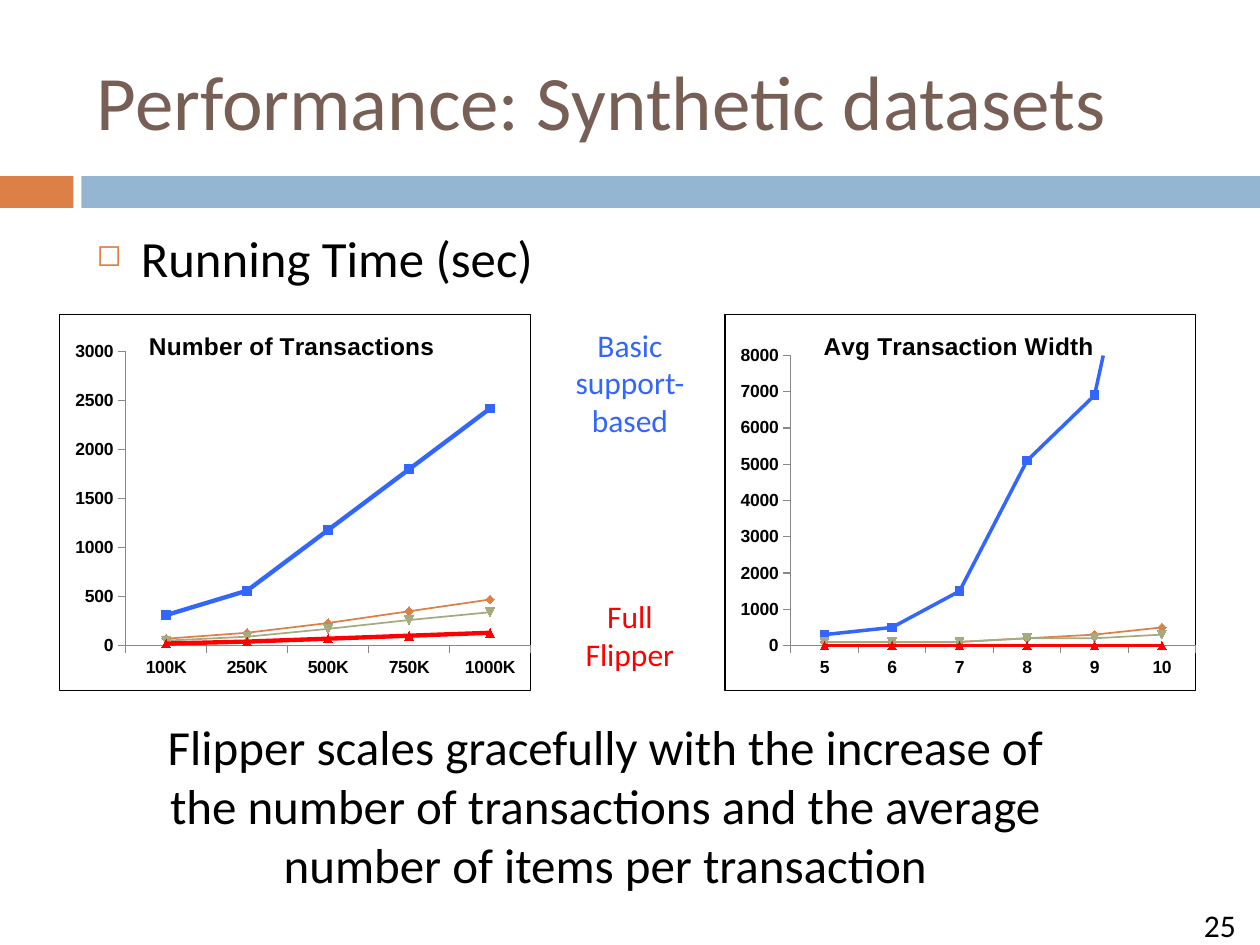
from lxml import etree
from pptx import Presentation
from pptx.chart.data import CategoryChartData
from pptx.dml.color import RGBColor
from pptx.enum.chart import XL_CHART_TYPE, XL_TICK_MARK
from pptx.enum.shapes import MSO_SHAPE
from pptx.enum.text import MSO_ANCHOR, PP_ALIGN
from pptx.oxml import parse_xml
from pptx.oxml.ns import nsdecls, qn
from pptx.util import Cm, Pt

LINE_MARKERS = XL_CHART_TYPE.LINE_MARKERS
TICK_OUTSIDE, TICK_NONE = XL_TICK_MARK.OUTSIDE, XL_TICK_MARK.NONE
RECTANGLE = MSO_SHAPE.RECTANGLE
LEFT, CENTER = PP_ALIGN.LEFT, PP_ALIGN.CENTER
MIDDLE = MSO_ANCHOR.MIDDLE

BLACK = RGBColor(0x00, 0x00, 0x00)
GRAY = RGBColor(0x88, 0x88, 0x88)
BROWN = RGBColor(0x77, 0x5F, 0x55)
ORANGE = RGBColor(0xDD, 0x80, 0x47)
PALE_BLUE = RGBColor(0x94, 0xB6, 0xD2)
BLUE = RGBColor(0x33, 0x66, 0xFF)
GREEN = RGBColor(0xA5, 0xAB, 0x81)
RED = RGBColor(0xFF, 0x00, 0x00)

SERIES_COLORS = (BLUE, ORANGE, GREEN, RED)


class SlideBuilder:
    """Holds the style and the current slide, and adds each kind of element."""

    text_font = "Calibri"
    chart_font = "Arial"

    def __init__(self, slide):
        self.slide = slide

    def format_text(self, text_frame, text, size, color, alignment):
        text_frame.word_wrap = True
        text_frame.text = text
        paragraph = text_frame.paragraphs[0]
        paragraph.alignment = alignment
        font = paragraph.runs[0].font
        font.name, font.size = self.text_font, Pt(size)
        font.color.rgb = color
        return paragraph

    def title(self, text, left, top, width, height):
        shape = self.slide.shapes.title
        shape.left, shape.top = Cm(left), Cm(top)
        shape.width, shape.height = Cm(width), Cm(height)
        shape.text_frame.vertical_anchor = MIDDLE
        self.format_text(shape.text_frame, text, 44, BROWN, LEFT)

    def band(self, left, width, color):
        shape = self.slide.shapes.add_shape(RECTANGLE, Cm(left), Cm(3.55), Cm(width), Cm(0.64))
        shape.shadow.inherit = False
        shape.fill.solid()
        shape.fill.fore_color.rgb = color
        shape.line.fill.background()

    def text(self, text, left, top, width, height, size, color=BLACK, alignment=CENTER):
        shape = self.slide.shapes.add_textbox(Cm(left), Cm(top), Cm(width), Cm(height))
        return self.format_text(shape.text_frame, text, size, color, alignment)

    def bullet(self, text, left, top, width, height):
        paragraph = self.text(text, left, top, width, height, 29, alignment=LEFT)
        properties = paragraph._p.get_or_add_pPr()
        properties.set("marL", str(Cm(0.89)))
        properties.set("indent", str(Cm(-0.89)))
        color = etree.SubElement(properties, qn("a:buClr"))
        etree.SubElement(color, qn("a:srgbClr"), val=str(ORANGE))
        etree.SubElement(properties, qn("a:buSzPct"), val="60000")
        etree.SubElement(properties, qn("a:buChar"), char="◻")

    def place(self, element, **position):
        layout = element.find(qn("c:layout"))
        if layout is None:
            layout = etree.Element(qn("c:layout"))
            element.insert(0, layout)
        manual = etree.SubElement(layout, qn("c:manualLayout"))
        if "w" in position:
            etree.SubElement(manual, qn("c:layoutTarget"), val="inner")
        for side in ("x", "y"):
            etree.SubElement(manual, qn(f"c:{side}Mode"), val="edge")
        for key, value in position.items():
            etree.SubElement(manual, qn(f"c:{key}"), val=str(value))

    def axis(self, axis):
        axis.has_major_gridlines = False
        axis.major_tick_mark, axis.minor_tick_mark = TICK_OUTSIDE, TICK_NONE
        axis.format.line.color.rgb = GRAY
        axis.format.line.width = Pt(0.75)
        font = axis.tick_labels.font
        font.name, font.size, font.bold = self.chart_font, Pt(10), True
        font.color.rgb = BLACK

    def chart_title(self, chart, text, x, y):
        chart.has_title = True
        text_frame = chart.chart_title.text_frame
        text_frame.text = text
        font = text_frame.paragraphs[0].runs[0].font
        font.name, font.size, font.bold = self.chart_font, Pt(14), True
        font.color.rgb = BLACK
        element = chart.chart_title._element
        self.place(element, x=x, y=y)
        element.find(qn("c:overlay")).set("val", "1")

    def chart(self, title, title_at, left, categories, rows, maximum, unit, widths, plot):
        data = CategoryChartData()
        data.categories = categories
        for number, values in enumerate(rows, 1):
            data.add_series(f"Series {number}", values)
        chart = self.slide.shapes.add_chart(
            LINE_MARKERS, Cm(left), Cm(6.32), Cm(9.52), Cm(7.62), data).chart
        chart.has_legend = False
        chart.font.name, chart.font.size = self.text_font, Pt(10)
        self.chart_title(chart, title, *title_at)
        self.axis(chart.category_axis)
        self.axis(chart.value_axis)
        chart.value_axis.minimum_scale, chart.value_axis.maximum_scale = 0, maximum
        chart.value_axis.major_unit = unit
        chart.plots[0].vary_by_categories = False
        for series, color, width in zip(chart.plots[0].series, SERIES_COLORS, widths):
            series.smooth = False
            series.format.line.color.rgb = color
            series.format.line.width = Pt(width)
            series.marker.size = 5
            series.marker.format.fill.solid()
            series.marker.format.fill.fore_color.rgb = color
            series.marker.format.line.color.rgb = color
        chart_element = chart._chartSpace.find(qn("c:chart"))
        self.place(chart_element.find(qn("c:plotArea")), **plot)
        chart_element.addnext(parse_xml(
            f'<c:spPr {nsdecls("c", "a")}><a:noFill/><a:ln w="{Pt(0.75)}"><a:solidFill>'
            f'<a:srgbClr val="{BLACK}"/></a:solidFill></a:ln></c:spPr>'))


def main():
    presentation = Presentation()
    presentation.slide_width, presentation.slide_height = Cm(25.4), Cm(19.05)
    builder = SlideBuilder(presentation.slides.add_slide(presentation.slide_layouts[5]))

    builder.band(0, 1.48, ORANGE)
    builder.band(1.64, 23.76, PALE_BLUE)
    builder.title("Performance: Synthetic datasets", 1.7, 0.64, 22.66, 2.74)
    builder.bullet("Running Time (sec)", 1.7, 4.45, 22.66, 1.5)
    builder.chart(
        "Number of Transactions", (0.18, 0.03), 1.19,
        ("100K", "250K", "500K", "750K", "1000K"),
        ((310, 560, 1180, 1800, 2420), (70, 130, 230, 350, 470),
         (50, 90, 170, 260, 340), (20, 40, 70, 100, 130)),
        3000, 500, (2.5, 1, 1, 2.5), {"x": 0.14, "y": 0.1, "w": 0.86, "h": 0.78})
    builder.chart(
        "Avg Transaction Width", (0.2, 0.03), 14.6,
        ("5", "6", "7", "8", "9", "10"),
        ((300, 500, 1500, 5100, 6900, 15400), (100, 100, 100, 200, 300, 500),
         (100, 100, 100, 200, 200, 300), (0, 0, 0, 0, 0, 0)),
        8000, 1000, (2, 1, 1, 2), {"x": 0.14, "y": 0.11, "w": 0.86, "h": 0.77})
    builder.text("Basic support-based", 11.1, 6.44, 3.2, 2.57, 18, BLUE)
    builder.text("Full Flipper", 11.1, 11.92, 3.2, 1.8, 18, RED)
    builder.text(
        "Flipper scales gracefully with the increase of the number of transactions "
        "and the average number of items per transaction", 2.7, 14.32, 19, 3.84, 28)
    builder.text("25", 24.02, 18.13, 1.47, 0.69, 18, alignment=LEFT)

    presentation.save("out.pptx")


if __name__ == "__main__":
    main()
